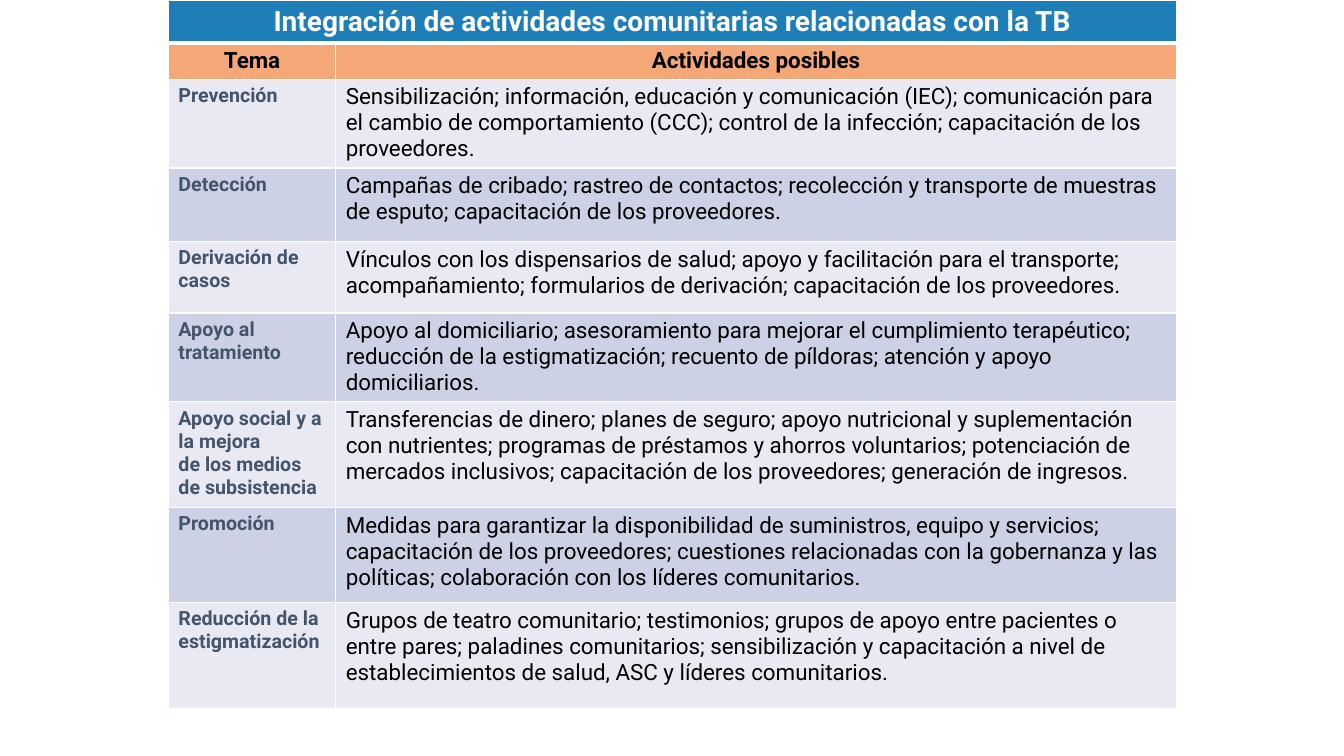
from dataclasses import dataclass

from lxml.etree import SubElement
from pptx import Presentation
from pptx.dml.color import RGBColor
from pptx.enum.text import PP_ALIGN
from pptx.oxml.ns import qn
from pptx.util import Inches, Pt


@dataclass(frozen=True)
class Theme:
    font: str = "Roboto"
    title_fill: str = "1E7FB8"
    heading_fill: str = "F4A877"
    bands: tuple = ("E8E9F3", "CDD1E5")
    white: str = "FFFFFF"
    black: str = "000000"
    topic: str = "44546A"
    title_size: int = 20
    body_size: int = 16
    topic_size: int = 14
    thin: int = 1
    thick: int = 3


class SlideBuilder:
    def __init__(self, slide, theme):
        self.slide = slide
        self.theme = theme

    def table(self, left, top, widths, heights):
        frame = self.slide.shapes.add_table(
            len(heights), len(widths), Inches(left), Inches(top),
            Inches(sum(widths)), Inches(sum(heights)))
        grid = frame.table
        for column, width in zip(grid.columns, widths):
            column.width = Inches(width)
        for row, height in zip(grid.rows, heights):
            row.height = Inches(height)
        return grid

    def borders(self, cell, top, bottom):
        properties = cell._tc.get_or_add_tcPr()
        thin = self.theme.thin
        sides = (("a:lnL", thin), ("a:lnR", thin), ("a:lnT", top), ("a:lnB", bottom))
        for index, (tag, width) in enumerate(sides):
            line = SubElement(properties, qn(tag), w=str(Pt(width)))
            fill = SubElement(line, qn("a:solidFill"))
            SubElement(fill, qn("a:srgbClr"), val=self.theme.white)
            # Border lines come before the fill in the cell properties
            properties.insert(index, line)

    def cell(self, cell, text, fill, color, size, bold=True, align=PP_ALIGN.LEFT,
             top=Theme.thin, bottom=Theme.thin):
        cell.fill.solid()
        cell.fill.fore_color.rgb = RGBColor.from_string(fill)
        self.borders(cell, top, bottom)
        frame = cell.text_frame
        for index, content in enumerate(text.split("\n")):
            paragraph = frame.add_paragraph() if index else frame.paragraphs[0]
            paragraph.alignment = align
            run = paragraph.add_run()
            run.text = content
            run.font.name = self.theme.font
            run.font.size = Pt(size)
            run.font.bold = bold
            run.font.color.rgb = RGBColor.from_string(color)


TITLE = "Integración de actividades comunitarias relacionadas con la TB"
HEADINGS = ("Tema", "Actividades posibles")
HEADER_HEIGHTS = [0.41, 0.35]

# Topic, activities, row height
TOPICS = [
    ("Prevención",
     "Sensibilización; información, educación y comunicación (IEC); comunicación para "
     "el cambio de comportamiento (CCC); control de la infección; capacitación de los "
     "proveedores.", 0.88),
    ("Detección",
     "Campañas de cribado; rastreo de contactos; recolección y transporte de muestras "
     "de esputo; capacitación de los proveedores.", 0.73),
    ("Derivación de casos",
     "Vínculos con los dispensarios de salud; apoyo y facilitación para el transporte; "
     "acompañamiento; formularios de derivación; capacitación de los proveedores.", 0.71),
    ("Apoyo al\ntratamiento",
     "Apoyo al domiciliario; asesoramiento para mejorar el cumplimiento terapéutico; "
     "reducción de la estigmatización; recuento de píldoras; atención y apoyo "
     "domiciliarios.", 0.88),
    ("Apoyo social y a la mejora\nde los medios de subsistencia",
     "Transferencias de dinero; planes de seguro; apoyo nutricional y suplementación "
     "con nutrientes; programas de préstamos y ahorros voluntarios; potenciación de "
     "mercados inclusivos; capacitación de los proveedores; generación de ingresos.", 1.05),
    ("Promoción",
     "Medidas para garantizar la disponibilidad de suministros, equipo y servicios; "
     "capacitación de los proveedores; cuestiones relacionadas con la gobernanza y las "
     "políticas; colaboración con los líderes comunitarios.", 0.94),
    ("Reducción de la estigmatización",
     "Grupos de teatro comunitario; testimonios; grupos de apoyo entre pacientes o "
     "entre pares; paladines comunitarios; sensibilización y capacitación a nivel de "
     "establecimientos de salud, ASC y líderes comunitarios.", 1.05),
]


def main():
    theme = Theme()
    deck = Presentation()
    deck.slide_width, deck.slide_height = Inches(13.33), Inches(7.5)
    builder = SlideBuilder(deck.slides.add_slide(deck.slide_layouts[6]), theme)
    activities_table = builder.table(
        1.67, 0, [1.66, 8.34], HEADER_HEIGHTS + [height for _, _, height in TOPICS])

    # Title band across both columns
    title_cell = activities_table.cell(0, 0)
    title_cell.merge(activities_table.cell(0, 1))
    builder.cell(title_cell, TITLE, theme.title_fill, theme.white, theme.title_size,
                 align=PP_ALIGN.CENTER, bottom=theme.thick)

    # Column headings
    for column, heading in enumerate(HEADINGS):
        builder.cell(activities_table.cell(1, column), heading, theme.heading_fill,
                     theme.black, theme.body_size, align=PP_ALIGN.CENTER, top=theme.thick)

    # Topics in alternating bands
    for index, (topic, activities, _) in enumerate(TOPICS):
        row = index + len(HEADER_HEIGHTS)
        band = theme.bands[index % 2]
        builder.cell(activities_table.cell(row, 0), topic, band, theme.topic,
                     theme.topic_size)
        builder.cell(activities_table.cell(row, 1), activities, band, theme.black,
                     theme.body_size, bold=False)

    deck.save("out.pptx")


if __name__ == "__main__":
    main()
